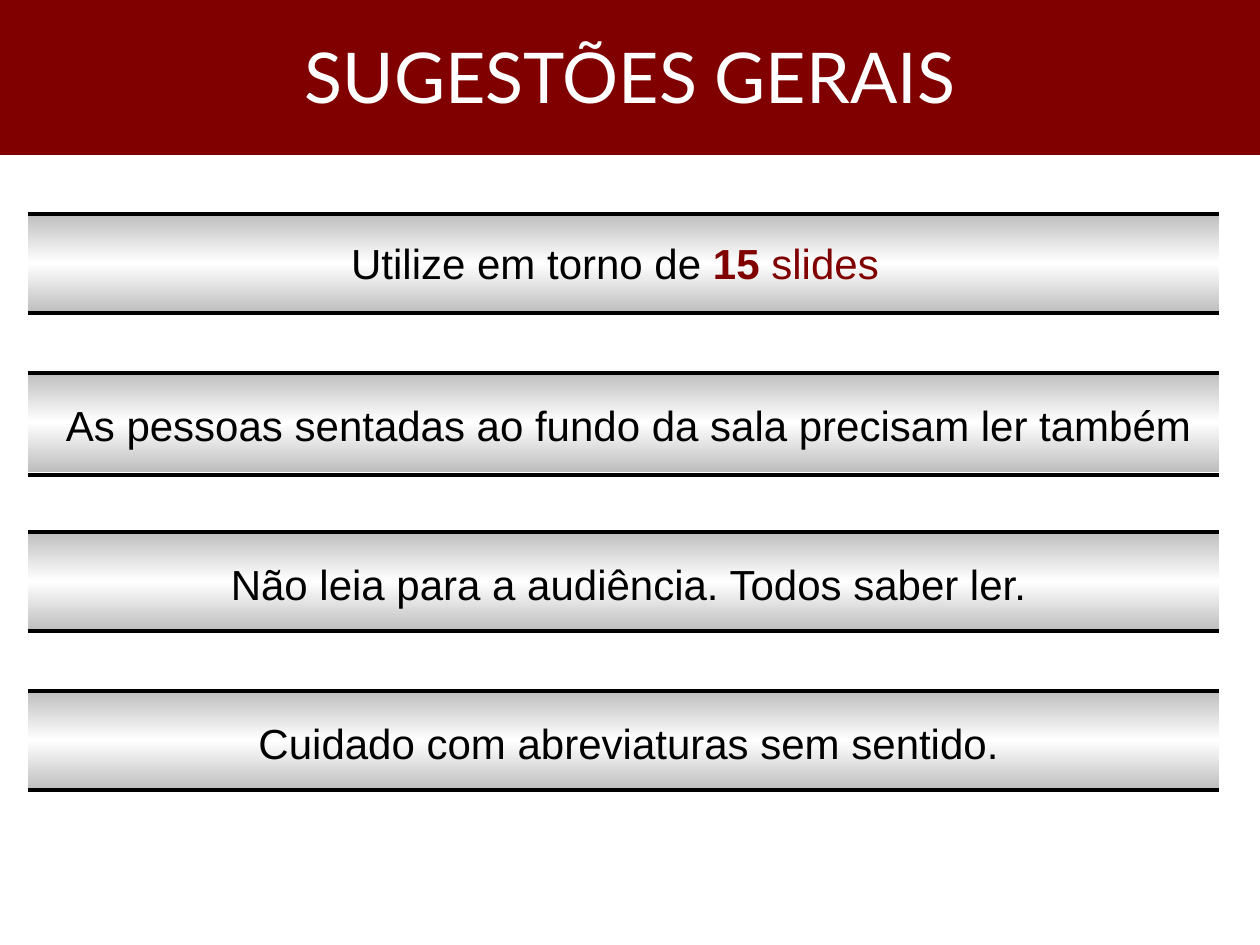
"""Build the slide of general suggestions: a title band and four ruled bars."""
import copy

import pptx
import pptx.dml.color
import pptx.enum.shapes
import pptx.enum.text
import pptx.oxml.ns
import pptx.util
from lxml import etree

RECT = pptx.enum.shapes.MSO_SHAPE.RECTANGLE
STRAIGHT = pptx.enum.shapes.MSO_CONNECTOR.STRAIGHT
CENTER = pptx.enum.text.PP_ALIGN.CENTER
qn = pptx.oxml.ns.qn


def px(*values):
    return [pptx.util.Emu(round(v * 914400 / 126)) for v in values]


def rgb(code):
    return pptx.dml.color.RGBColor.from_string(code)


prs = pptx.Presentation()
prs.slide_width, prs.slide_height = px(1260, 945)
s = prs.slides.add_slide(prs.slide_layouts[6])

sp = s.shapes.add_shape(RECT, *px(0, -4, 1260, 159))
sp.shadow.inherit = False
sp.fill.solid()
sp.fill.fore_color.rgb = rgb("800000")
sp.line.fill.background()
tf = sp.text_frame
tf.vertical_anchor = pptx.enum.text.MSO_ANCHOR.MIDDLE
p = tf.paragraphs[0]
p.text = "SUGESTÕES GERAIS"
p.alignment = CENTER
r = p.runs[0]
r.font.name = "Lato"
r.font.size = pptx.util.Pt(40)
r.font.color.rgb = rgb("FFFFFF")

left, width, height, top, pitch = 28, 1191, 99, 214, 159
bars = [
    (62, 17, 1106, 99, [("Utilize em torno de ", "000000", False),
                        ("15 ", "800000", True), ("slides", "800000", False)]),
    (28, 20, 1201, 102, [("As pessoas sentadas ao fundo da sala precisam ler também",
                          "000000", False)]),
    (28, 20, 1201, 99, [("Não leia para a audiência. Todos saber ler.", "000000", False)]),
    (28, 20, 1201, 99, [("Cuidado com abreviaturas sem sentido.", "000000", False)]),
]

for i, (text_left, text_drop, text_width, rule_drop, parts) in enumerate(bars):
    y = top + i * pitch
    sp = s.shapes.add_shape(RECT, *px(left, y, width, height))
    sp.shadow.inherit = False
    sp.line.fill.background()
    sp.fill.gradient()
    sp.fill.gradient_angle = 90
    stops = sp._element.spPr.find(".//" + qn("a:gsLst"))
    stops.append(copy.deepcopy(stops[-1]))
    for stop, position, color in zip(sp.fill.gradient_stops, (0, 0.5, 1),
                                     ("BEBEBE", "FFFFFF", "BEBEBE")):
        stop.position = position
        stop.color.rgb = rgb(color)

    box = s.shapes.add_textbox(*px(text_left, y + text_drop, text_width, 63))
    tf = box.text_frame
    tf.word_wrap = True
    tf.auto_size = pptx.enum.text.MSO_AUTO_SIZE.SHAPE_TO_FIT_TEXT
    p = tf.paragraphs[0]
    p.alignment = CENTER
    for text, color, bold in parts:
        r = p.add_run()
        r.text = text
        r.font.name = "Arial"
        r.font.size = pptx.util.Pt(24)
        r.font.bold = bold
        r.font.color.rgb = rgb(color)

    for rule_y in (y + rule_drop, y):
        rule = s.shapes.add_connector(STRAIGHT, *px(left, rule_y, left + width, rule_y))
        rule.line.width = pptx.util.Pt(2.25)
        rule.line.color.rgb = rgb("000000")
        etree.SubElement(rule._element.spPr, qn("a:effectLst"))

prs.save("out.pptx")
